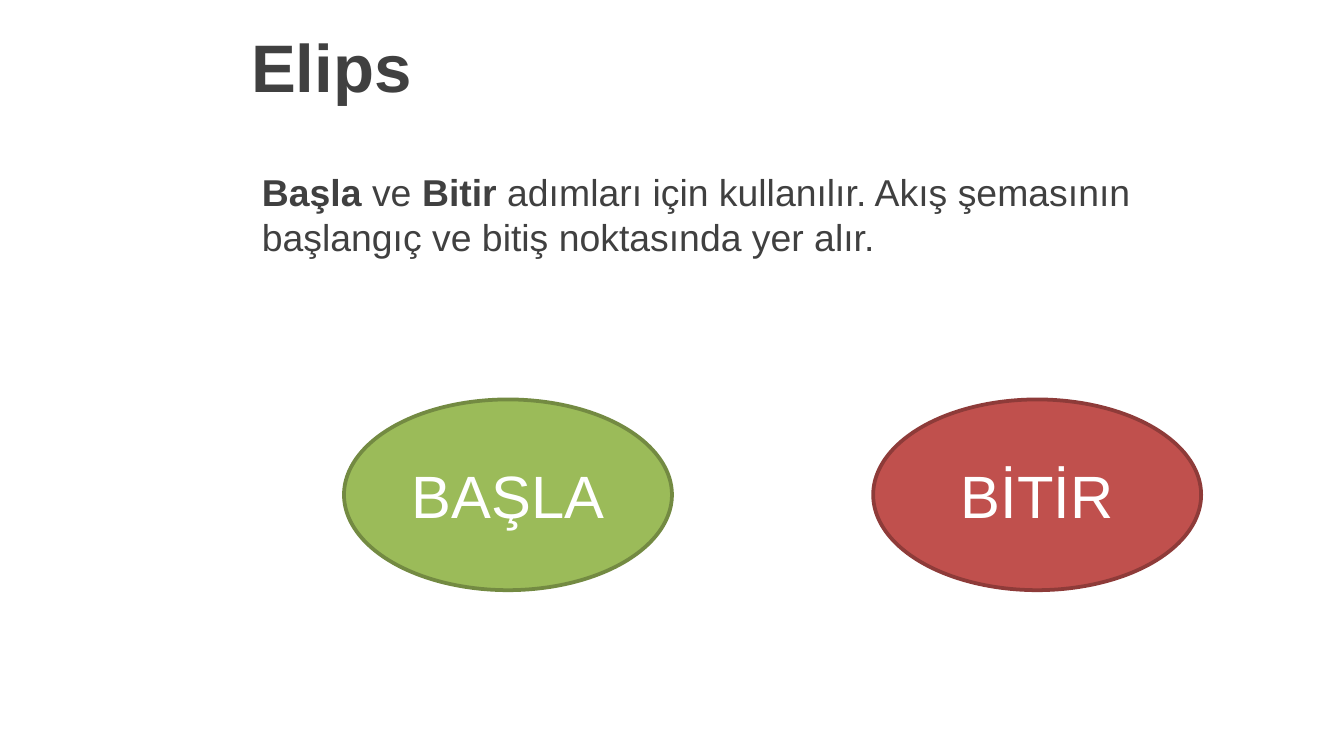
"""Builds a slide on the ellipse symbol in flowcharts."""
import pptx
import pptx.dml.color
import pptx.enum.shapes
import pptx.enum.text
import pptx.util

Pt = pptx.util.Pt


def colour(value):
    return pptx.dml.color.RGBColor.from_string(value)


class SlideBuilder:
    font = "Arial"
    ink = "404040"
    light = "FFFFFF"

    def __init__(self, slide):
        self.slide = slide

    def style(self, paragraph, size, ink):
        paragraph.font.name = self.font
        paragraph.font.size = Pt(size)
        paragraph.font.color.rgb = colour(ink)

    def text(self, left, top, width, height, size, runs):
        box = self.slide.shapes.add_textbox(Pt(left), Pt(top), Pt(width), Pt(height))
        frame = box.text_frame
        frame.word_wrap = True
        frame.vertical_anchor = pptx.enum.text.MSO_ANCHOR.MIDDLE
        paragraph = frame.paragraphs[0]
        self.style(paragraph, size, self.ink)
        for wording, bold in runs:
            run = paragraph.add_run()
            run.text = wording
            run.font.bold = bold

    def ellipse(self, left, top, width, height, label, fill, outline):
        oval = self.slide.shapes.add_shape(
            pptx.enum.shapes.MSO_SHAPE.OVAL, Pt(left), Pt(top), Pt(width), Pt(height))
        oval.shadow.inherit = False
        oval.fill.solid()
        oval.fill.fore_color.rgb = colour(fill)
        oval.line.color.rgb = colour(outline)
        oval.line.width = Pt(2)
        frame = oval.text_frame
        frame.vertical_anchor = pptx.enum.text.MSO_ANCHOR.MIDDLE
        paragraph = frame.paragraphs[0]
        paragraph.text = label
        paragraph.alignment = pptx.enum.text.PP_ALIGN.CENTER
        self.style(paragraph, 32, self.light)


def main():
    deck = pptx.Presentation()
    deck.slide_width, deck.slide_height = Pt(720), Pt(405)
    builder = SlideBuilder(deck.slides.add_slide(deck.slide_layouts[6]))

    builder.text(127.5, 0, 592.5, 70, 36, [("Elips", True)])
    builder.text(133.2, 77.8, 555.8, 73.4, 20, [
        ("Başla", True),
        (" ve ", False),
        ("Bitir", True),
        (" adımları için kullanılır. Akış şemasının başlangıç ve bitiş noktasında yer alır.", False),
    ])

    steps = [("BAŞLA", "9BBB59", "738A42"), ("BİTİR", "C0504D", "8E3B39")]
    for index, (label, fill, outline) in enumerate(steps):
        builder.ellipse(184.3 + index * 283.5, 214, 175.7, 102.2, label, fill, outline)

    deck.save("out.pptx")


if __name__ == "__main__":
    main()
